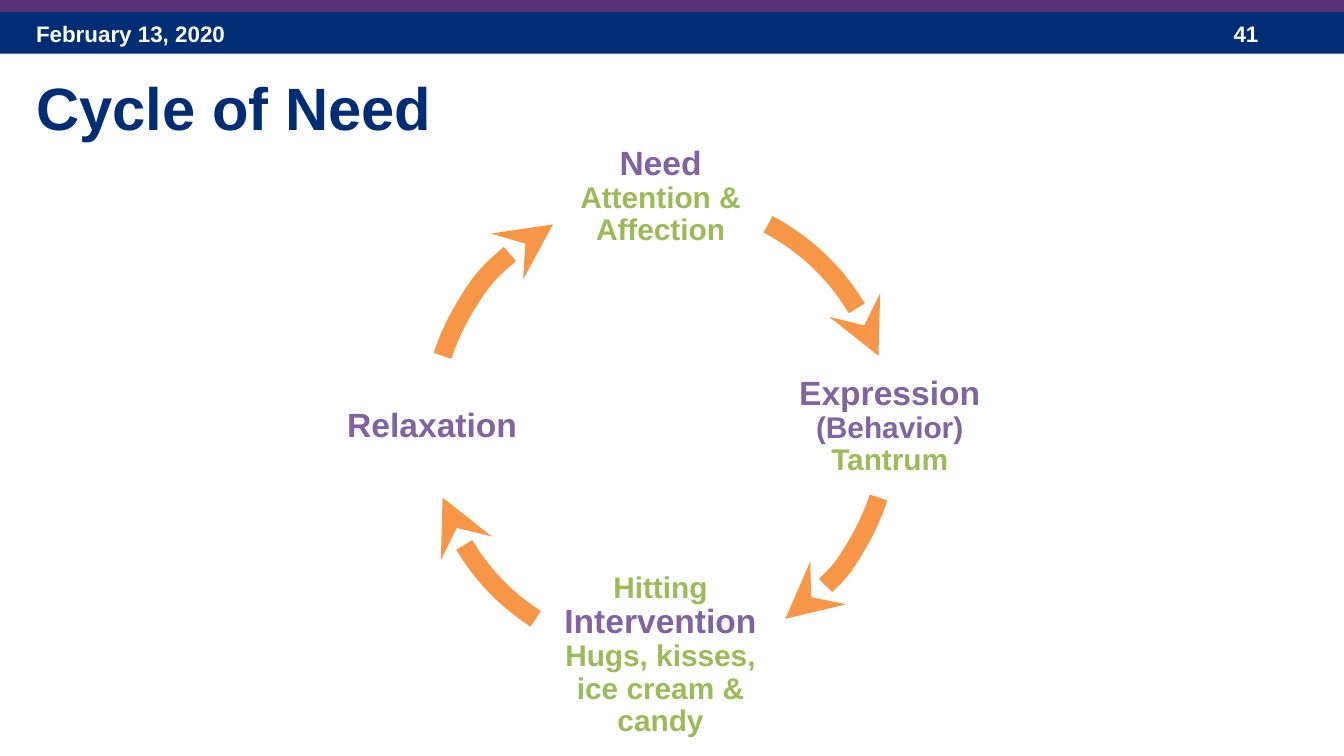
from lxml.etree import SubElement
from pptx import Presentation
from pptx.dml.color import RGBColor
from pptx.enum.shapes import MSO_SHAPE
from pptx.enum.text import MSO_ANCHOR, MSO_AUTO_SIZE, PP_ALIGN
from pptx.oxml.ns import qn
from pptx.util import Inches, Pt

NAVY, PLUM, WHITE = "002D73", "553278", "FFFFFF"
PURPLE, GREEN, ORANGE = "8064A2", "9BBB59", "F79646"

WIDTH = 10
HEIGHT = WIDTH * 9 / 16
TITLE = "Cycle of Need"
# left, top, width, height, colour
BANDS = [(0, 0.07, WIDTH, 0.33, NAVY), (0, 0, WIDTH, 0.09, PLUM)]
# left, width, text
HEADER = [(0.17, 2.33, "February 13, 2020"), (9.08, 0.75, "41")]
# left, top, width, lines of (text, size, colour)
STAGES = [
    (4.17, 1, 1.49, [("Need", 18, PURPLE), ("Attention & Affection", 16, GREEN)]),
    (5.71, 2.71, 1.82, [("Expression", 18, PURPLE), ("(Behavior)", 16, PURPLE),
                        ("Tantrum", 16, GREEN)]),
    (4.05, 4.41, 1.73, [("Hitting", 16, GREEN), ("Intervention", 18, PURPLE),
                        ("Hugs, kisses, ice cream & candy", 16, GREEN)]),
    (2.47, 2.71, 1.49, [("Relaxation", 18, PURPLE)]),
]
STAGE_HEIGHT = 0.93
RING = (3.21, 1.47, 3.41, 3.41)
# start and end in degrees, clockwise from three o'clock
ARROWS = [(298, 342), (18, 57), (123, 162), (198, 242)]


def rgb(color):
    return RGBColor.from_string(color)


def place(*lengths):
    return [Inches(n) for n in lengths]


def add_run(p, text, size, color):
    r = p.add_run()
    r.text = text
    r.font.name, r.font.size, r.font.bold = "Arial", Pt(size), True
    r.font.color.rgb = rgb(color)


def prepare(tf, anchor=MSO_ANCHOR.MIDDLE):
    """Make a wrapped frame of fixed size and return its first paragraph."""
    tf.word_wrap = True
    tf.auto_size = MSO_AUTO_SIZE.NONE
    tf.vertical_anchor = anchor
    return tf.paragraphs[0]


def add_band(s, *box, color):
    sp = s.shapes.add_shape(MSO_SHAPE.RECTANGLE, *place(*box))
    sp.shadow.inherit = False
    sp.fill.solid()
    sp.fill.fore_color.rgb = rgb(color)
    sp.line.fill.background()


def add_stage(s, left, top, width, lines):
    sp = s.shapes.add_textbox(*place(left, top, width, STAGE_HEIGHT))
    tf = sp.text_frame
    tf.margin_left = tf.margin_right = Inches(0.07)
    tf.margin_top = tf.margin_bottom = Inches(0.07)
    p = prepare(tf)
    p.alignment, p.line_spacing = PP_ALIGN.CENTER, 0.9
    for i, line in enumerate(lines):
        if i:
            p.add_line_break()
        add_run(p, *line)


def add_arrow(s, start, end):
    sp = s.shapes.add_shape(MSO_SHAPE.ARC, *place(*RING))
    sp.shadow.inherit = False
    for i, degrees in enumerate((start, end)):
        sp.adjustments[i] = degrees * 0.6  # 60000 units a degree, scaled by 100000
    sp.fill.background()
    sp.line.color.rgb = rgb(ORANGE)
    sp.line.width = Pt(10)
    SubElement(sp.element.spPr.find(qn("a:ln")), qn("a:tailEnd"), type="stealth")


prs = Presentation()
prs.slide_width, prs.slide_height = place(WIDTH, HEIGHT)
s = prs.slides.add_slide(prs.slide_layouts[5])

for *box, color in BANDS:
    add_band(s, *box, color=color)
for left, width, text in HEADER:
    sp = s.shapes.add_textbox(*place(left, 0.1, width, 0.3))
    add_run(prepare(sp.text_frame), text, 12, WHITE)

title = s.shapes.title
title.left, title.top, title.width, title.height = place(0.17, 0.48, 9.5, 0.7)
p = prepare(title.text_frame, MSO_ANCHOR.TOP)
p.alignment = PP_ALIGN.LEFT
add_run(p, TITLE, 32, NAVY)

for stage, arrow in zip(STAGES, ARROWS):
    add_stage(s, *stage)
    add_arrow(s, *arrow)

prs.save("out.pptx")
